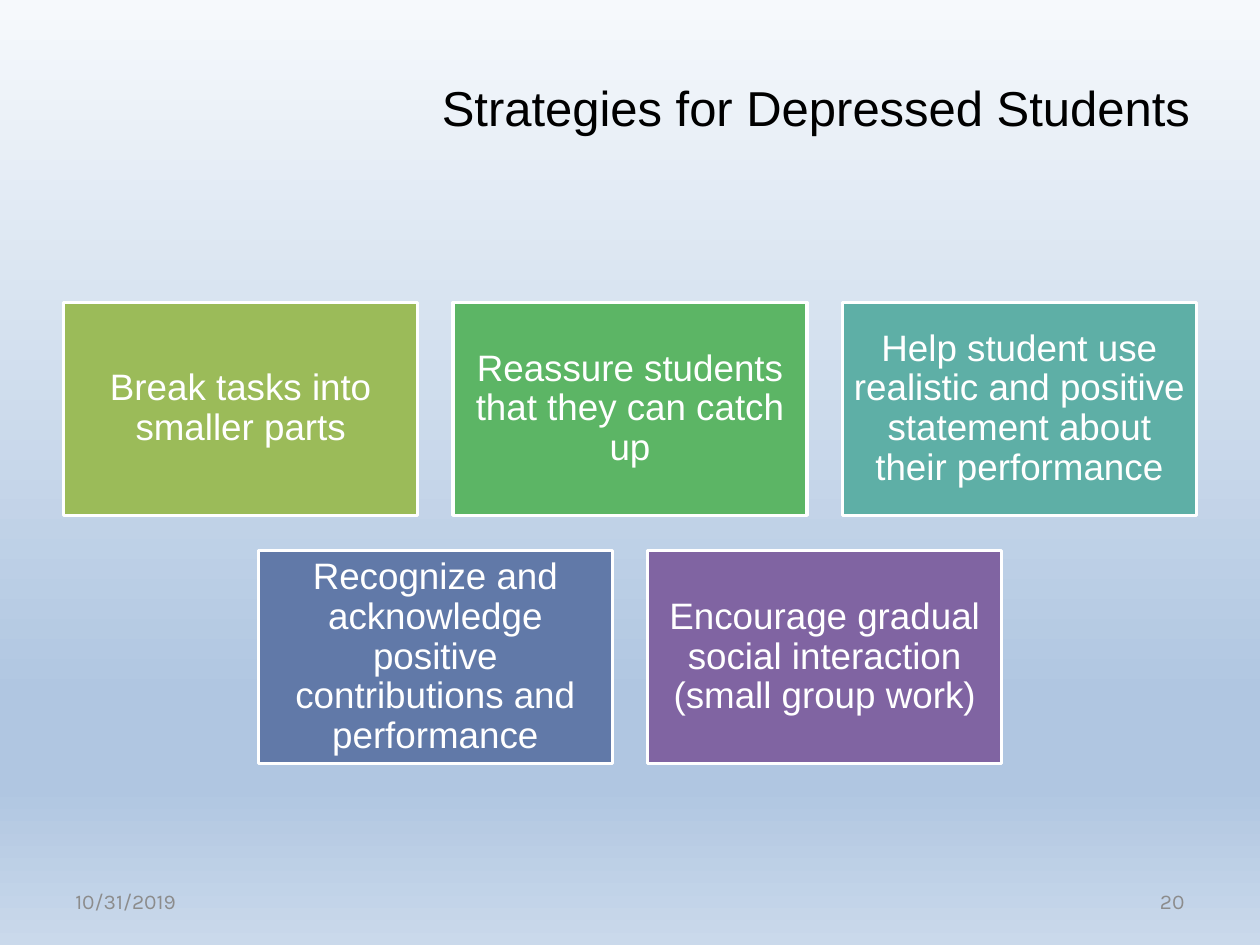
from copy import deepcopy

from pptx import Presentation
from pptx.dml.color import RGBColor
from pptx.enum.shapes import MSO_SHAPE
from pptx.enum.text import MSO_ANCHOR, PP_ALIGN
from pptx.util import Inches, Pt

BLACK = RGBColor(0x00, 0x00, 0x00)
WHITE = RGBColor(0xFF, 0xFF, 0xFF)
GRAY = RGBColor(0x8C, 0x8C, 0x8C)
OLIVE = RGBColor(0x9B, 0xBB, 0x59)
GREEN = RGBColor(0x5C, 0xB5, 0x65)
TEAL = RGBColor(0x5E, 0xAF, 0xA6)
BLUE = RGBColor(0x61, 0x79, 0xA8)
PURPLE = RGBColor(0x80, 0x64, 0xA2)

BACKGROUND_STOPS = [(0, RGBColor(0xF6, 0xF9, 0xFC)), (74, RGBColor(0xB0, 0xC6, 0xE1)),
                    (83, RGBColor(0xB0, 0xC6, 0xE1)), (100, RGBColor(0xCA, 0xD9, 0xEB))]

STRATEGY_ROWS = [
    [("Break tasks into smaller parts", OLIVE),
     ("Reassure students that they can catch up", GREEN),
     ("Help student use realistic and positive statement about their performance", TEAL)],
    [("Recognize and acknowledge positive contributions and performance", BLUE),
     ("Encourage gradual social interaction (small group work)", PURPLE)],
]

TITLE_FONT = {"name": "Arial", "size": Pt(28)}
CARD_FONT = {"name": "Arial", "size": Pt(21)}
FOOTER_FONT = {"name": "Karla", "size": Pt(12)}

# text, left, top, width, height, alignment, font, colour
LABELS = [
    ("Strategies for Depressed Students", 3.14, 0.33, 6.67, 1.03,
     PP_ALIGN.CENTER, TITLE_FONT, BLACK),
    ("10/31/2019", 0.5, 6.95, 2.33, 0.4, PP_ALIGN.LEFT, FOOTER_FONT, GRAY),
    ("20", 7.17, 6.95, 2.33, 0.4, PP_ALIGN.RIGHT, FOOTER_FONT, GRAY),
]

SLIDE_WIDTH, SLIDE_HEIGHT = 10, 7.5
CARD_WIDTH, CARD_HEIGHT, CARD_GAP = 2.81, 1.69, 0.28
CARDS_TOP = 2.4
CARD_INSET = 0.08


def paint_background(slide):
    fill = slide.background.fill
    fill.gradient()
    fill.gradient_angle = 270
    stop_list = fill.gradient_stops[0]._gs.getparent()
    while len(stop_list) < len(BACKGROUND_STOPS):
        stop_list.append(deepcopy(stop_list[0]))
    for stop, (percent, color) in zip(fill.gradient_stops, BACKGROUND_STOPS):
        stop.position = percent / 100
        stop.color.rgb = color


def write(shape, text, alignment, font, color):
    frame = shape.text_frame
    frame.word_wrap = True
    frame.vertical_anchor = MSO_ANCHOR.MIDDLE
    paragraph = frame.paragraphs[0]
    paragraph.alignment = alignment
    run = paragraph.add_run()
    run.text = text
    for attribute, value in font.items():
        setattr(run.font, attribute, value)
    run.font.color.rgb = color


def add_card(slide, left, top, text, color):
    card = slide.shapes.add_shape(MSO_SHAPE.RECTANGLE, Inches(left), Inches(top),
                                  Inches(CARD_WIDTH), Inches(CARD_HEIGHT))
    card.shadow.inherit = False
    card.fill.solid()
    card.fill.fore_color.rgb = color
    card.line.color.rgb = WHITE
    card.line.width = Pt(2)
    for side in ("left", "top", "right", "bottom"):
        setattr(card.text_frame, f"margin_{side}", Inches(CARD_INSET))
    write(card, text, PP_ALIGN.CENTER, CARD_FONT, WHITE)
    card.text_frame.paragraphs[0].line_spacing = 0.9


def main():
    presentation = Presentation()
    presentation.slide_width = Inches(SLIDE_WIDTH)
    presentation.slide_height = Inches(SLIDE_HEIGHT)
    slide = presentation.slides.add_slide(presentation.slide_layouts[6])
    paint_background(slide)

    for text, left, top, width, height, alignment, font, color in LABELS:
        label = slide.shapes.add_textbox(Inches(left), Inches(top),
                                         Inches(width), Inches(height))
        write(label, text, alignment, font, color)

    for row, strategies in enumerate(STRATEGY_ROWS):
        row_width = len(strategies) * (CARD_WIDTH + CARD_GAP) - CARD_GAP
        row_left = (SLIDE_WIDTH - row_width) / 2
        top = CARDS_TOP + row * (CARD_HEIGHT + CARD_GAP)
        for column, (text, color) in enumerate(strategies):
            add_card(slide, row_left + column * (CARD_WIDTH + CARD_GAP), top, text, color)

    presentation.save("out.pptx")


if __name__ == "__main__":
    main()
